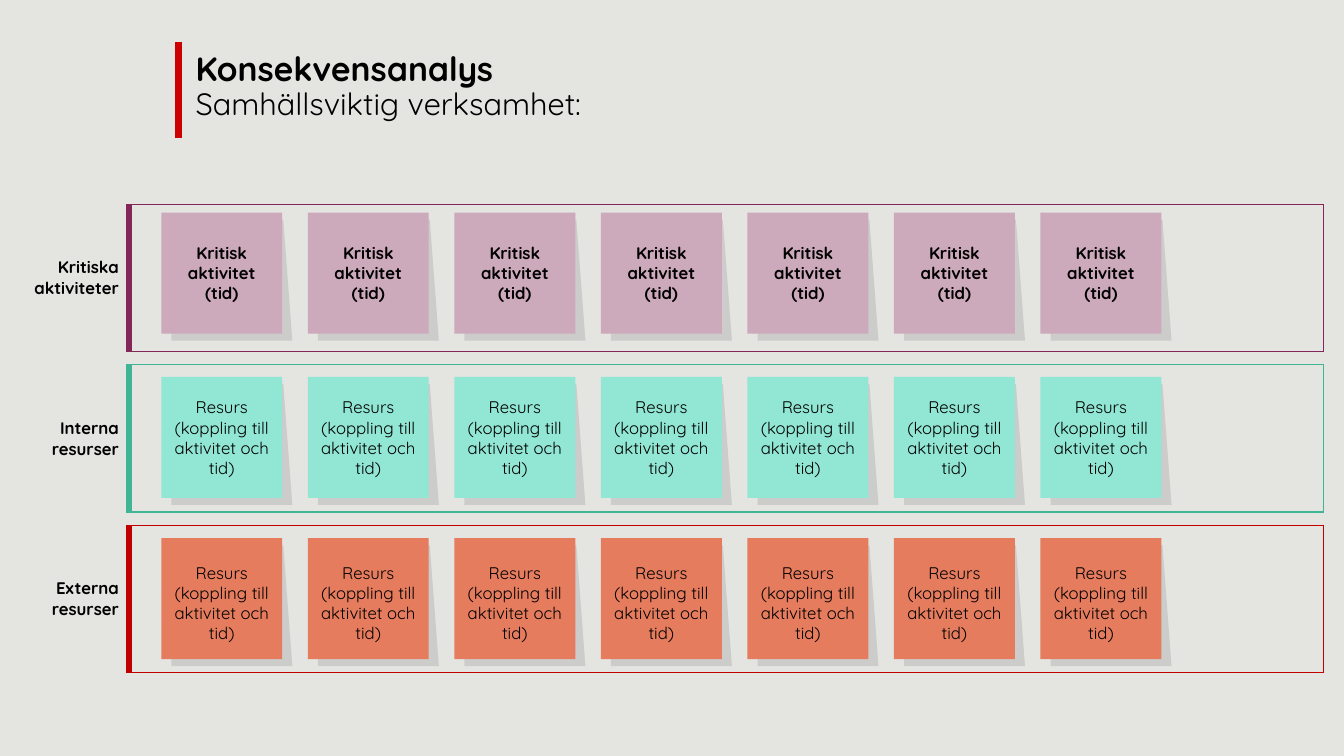
from dataclasses import dataclass

from lxml.etree import SubElement
from pptx import Presentation
from pptx.dml.color import RGBColor
from pptx.enum.shapes import MSO_CONNECTOR, MSO_SHAPE
from pptx.enum.text import MSO_ANCHOR, MSO_AUTO_SIZE, PP_ALIGN
from pptx.oxml.ns import qn
from pptx.slide import Slide
from pptx.table import _Cell
from pptx.text.text import TextFrame
from pptx.util import Inches, Pt

FONT = "Quicksand"
BLACK = RGBColor(0x00, 0x00, 0x00)
BACKGROUND = RGBColor(0xE4, 0xE4, 0xE1)
TITLE_RED = RGBColor(0xCC, 0x00, 0x00)
PLUM = RGBColor(0x82, 0x27, 0x57)
TEAL = RGBColor(0x41, 0xB4, 0x96)
RED = RGBColor(0xC0, 0x00, 0x00)
PINK = RGBColor(0xCD, 0xA9, 0xBC)
MINT = RGBColor(0x92, 0xE6, 0xD4)
ORANGE = RGBColor(0xE6, 0x7C, 0x5E)

NOTES_PER_LANE = 7
FIRST_LEFT, LAST_LEFT = 1.6, 10.32
NOTE_PITCH = (LAST_LEFT - FIRST_LEFT) / (NOTES_PER_LANE - 1)
NOTE_SIZE = 1.2
LANE_HEIGHT, GAP_HEIGHT = 1.46, 0.13
THIN, THICK = 1, 4.5


@dataclass(frozen=True)
class Lane:
    label: str
    border: RGBColor
    note_text: str
    note_fill: RGBColor
    note_top: float
    bold: bool = False
    bottom_inset: float = 0.08


@dataclass(frozen=True)
class Border:
    color: RGBColor
    width: float


RESOURCE = "Resurs\n(koppling till aktivitet och tid)"
LANES = [
    Lane("Kritiska\naktiviteter", PLUM, "Kritisk aktivitet\n(tid)", PINK, 2.11, bold=True),
    Lane("Interna\nresurser", TEAL, RESOURCE, MINT, 3.74),
    Lane("Externa resurser", RED, RESOURCE, ORANGE, 5.34, bottom_inset=0),
]


def format_text(tf: TextFrame, align: PP_ALIGN, bold: bool) -> None:
    for p in tf.paragraphs:
        p.alignment = align
        p.font.name = FONT
        p.font.size = Pt(12)
        p.font.bold = bold
        p.font.color.rgb = BLACK


def set_borders(cell: _Cell, **sides: Border) -> None:
    """Draw the given sides (L, R, T, B), clear the others and the fill."""
    tc_pr = cell._tc.get_or_add_tcPr()
    for side in "LRTB":
        ln = SubElement(tc_pr, qn(f"a:ln{side}"))
        border = sides.get(side)
        if border is None:
            SubElement(ln, qn("a:noFill"))
            continue
        ln.set("w", str(Pt(border.width)))
        fill = SubElement(ln, qn("a:solidFill"))
        SubElement(fill, qn("a:srgbClr")).set("val", str(border.color))
    cell.fill.background()


def shrink_empty_cell(cell: _Cell) -> None:
    """Keep an empty cell from stretching its narrow row."""
    cell.margin_top = cell.margin_bottom = 0
    p = cell.text_frame.paragraphs[0]
    SubElement(p._p, qn("a:endParaRPr")).set("sz", "400")


def add_title(slide: Slide) -> None:
    title = slide.shapes.title
    title.left, title.top = Inches(1.84), Inches(0.47)
    title.width, title.height = Inches(11.2), Inches(0.47)
    tf = title.text_frame
    tf.text = "Konsekvensanalys\nSamhällsviktig verksamhet:"
    tf.word_wrap = True
    tf.auto_size = MSO_AUTO_SIZE.NONE
    tf.vertical_anchor = MSO_ANCHOR.TOP
    for p, size, bold in zip(tf.paragraphs, (24, 22), (True, False)):
        p.alignment = PP_ALIGN.LEFT
        p.line_spacing = 0.9
        p.space_before = Pt(0)
        p.font.name = FONT
        p.font.size = Pt(size)
        p.font.bold = bold
        p.font.color.rgb = BLACK


def add_title_bar(slide: Slide) -> None:
    x = Inches(1.77)
    bar = slide.shapes.add_connector(MSO_CONNECTOR.STRAIGHT, x, Inches(0.42), x, Inches(1.37))
    bar.line.color.rgb = TITLE_RED
    bar.line.width = Pt(5)
    SubElement(bar._element.spPr, qn("a:effectLst"))


def add_lane_table(slide: Slide) -> None:
    row_count = 2 * len(LANES) - 1
    table = slide.shapes.add_table(
        row_count, 2, Inches(0.17), Inches(2.03), Inches(12.96), Inches(4.66)
    ).table
    table.first_row = table.horz_banding = False
    for column, width in zip(table.columns, (1.11, 11.85)):
        column.width = Inches(width)

    for i, lane in enumerate(LANES):
        row = 2 * i
        table.rows[row].height = Inches(LANE_HEIGHT)
        label, field = table.cell(row, 0), table.cell(row, 1)
        label.text_frame.text = lane.label
        label.vertical_anchor = MSO_ANCHOR.MIDDLE
        format_text(label.text_frame, PP_ALIGN.RIGHT, bold=True)
        thin, thick = Border(lane.border, THIN), Border(lane.border, THICK)
        set_borders(label, R=thick)
        set_borders(field, L=thick, T=thin, R=thin, B=thin)

    for i, (above, below) in enumerate(zip(LANES, LANES[1:])):
        row = 2 * i + 1
        table.rows[row].height = Inches(GAP_HEIGHT)
        left, right = table.cell(row, 0), table.cell(row, 1)
        set_borders(left)
        set_borders(right, T=Border(above.border, THIN), B=Border(below.border, THIN))
        shrink_empty_cell(left)
        shrink_empty_cell(right)


def add_note(slide: Slide, lane: Lane, left: float) -> None:
    """Add a sticky note grouped with its slanted shadow."""
    group = slide.shapes.add_group_shape()
    x, y = left + 0.1, lane.note_top + 0.07
    outline = [(x + 1.11, y), (x + NOTE_SIZE, y + NOTE_SIZE), (x, y + NOTE_SIZE)]
    builder = group.shapes.build_freeform(Inches(x), Inches(y))
    builder.add_line_segments([(Inches(px), Inches(py)) for px, py in outline])
    shade = builder.convert_to_shape()
    shade.shadow.inherit = False
    shade.line.fill.background()
    shade.fill.solid()
    shade.fill.fore_color.rgb = BLACK
    color = shade._element.spPr.find(qn("a:solidFill")).find(qn("a:srgbClr"))
    SubElement(color, qn("a:alpha")).set("val", "10000")

    size = Inches(NOTE_SIZE)
    sp = group.shapes.add_shape(
        MSO_SHAPE.RECTANGLE, Inches(left), Inches(lane.note_top), size, size
    )
    sp.shadow.inherit = False
    sp.line.fill.background()
    sp.fill.solid()
    sp.fill.fore_color.rgb = lane.note_fill
    tf = sp.text_frame
    tf.text = lane.note_text
    tf.word_wrap = True
    tf.vertical_anchor = MSO_ANCHOR.MIDDLE
    tf.margin_left = tf.margin_right = tf.margin_top = Inches(0.08)
    tf.margin_bottom = Inches(lane.bottom_inset)
    format_text(tf, PP_ALIGN.CENTER, lane.bold)


def main() -> None:
    prs = Presentation()
    prs.slide_width, prs.slide_height = Inches(13.33), Inches(7.5)
    slide = prs.slides.add_slide(prs.slide_layouts.get_by_name("Title Only"))
    slide.background.fill.solid()
    slide.background.fill.fore_color.rgb = BACKGROUND

    add_title(slide)
    add_title_bar(slide)
    add_lane_table(slide)
    for i in range(NOTES_PER_LANE):
        for lane in LANES:
            add_note(slide, lane, FIRST_LEFT + i * NOTE_PITCH)
    prs.save("out.pptx")


if __name__ == "__main__":
    main()
